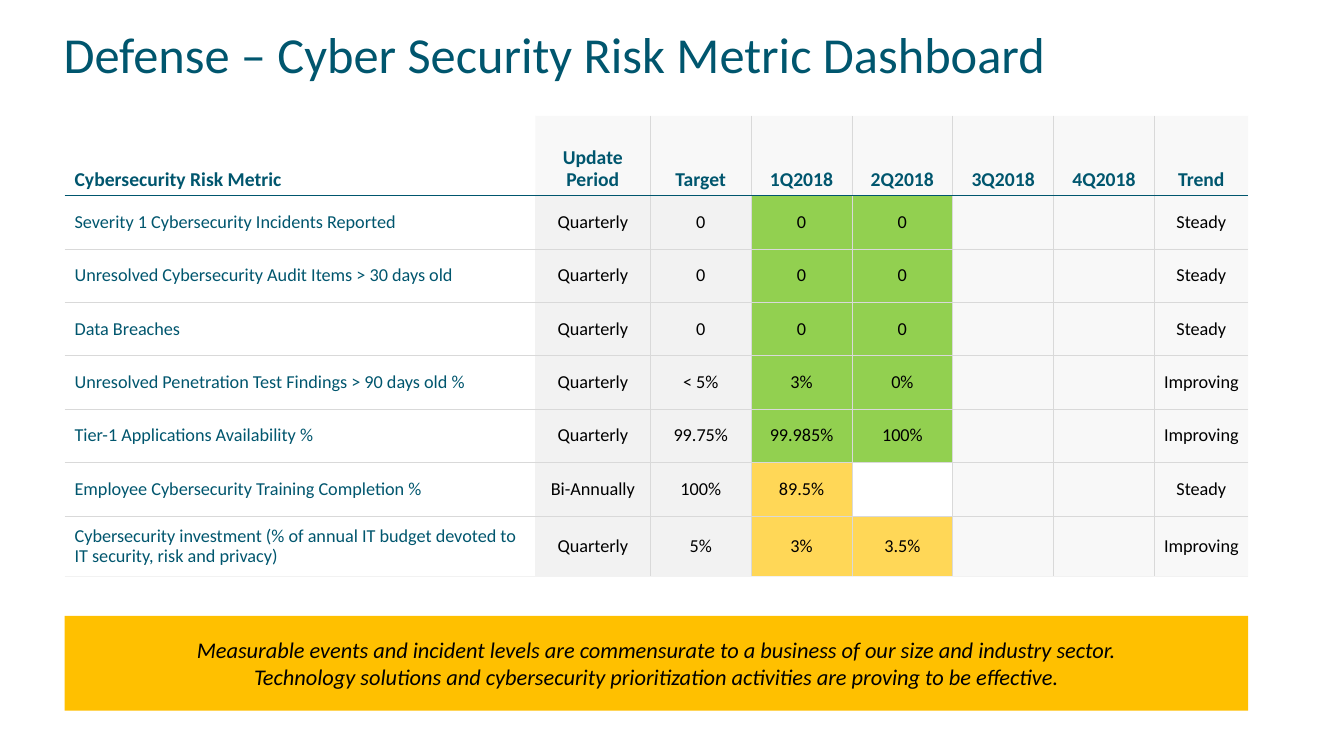
import pptx
import pptx.dml.color
import pptx.enum.shapes
import pptx.enum.text
import pptx.oxml.ns
import pptx.util
import lxml.etree

Inches = pptx.util.Inches
Pt = pptx.util.Pt
ALIGN = pptx.enum.text.PP_ALIGN
ANCHOR = pptx.enum.text.MSO_ANCHOR
AUTO_SIZE = pptx.enum.text.MSO_AUTO_SIZE

HEADINGS = ["Cybersecurity Risk Metric", "Update\vPeriod", "Target",
            "1Q2018", "2Q2018", "3Q2018", "4Q2018", "Trend"]
METRICS = [
    ["Severity 1 Cybersecurity Incidents Reported", "Quarterly", "0", "0", "0", "", "", "Steady"],
    ["Unresolved Cybersecurity Audit Items > 30 days old", "Quarterly", "0", "0", "0", "", "", "Steady"],
    ["Data Breaches", "Quarterly", "0", "0", "0", "", "", "Steady"],
    ["Unresolved Penetration Test Findings > 90 days old %", "Quarterly", "< 5%", "3%", "0%", "", "", "Improving"],
    ["Tier-1 Applications Availability %", "Quarterly", "99.75%", "99.985%", "100%", "", "", "Improving"],
    ["Employee Cybersecurity Training Completion %", "Bi-Annually", "100%", "89.5%", "", "", "", "Steady"],
    ["Cybersecurity investment (% of annual IT budget devoted to IT security, risk and privacy)",
     "Quarterly", "5%", "3%", "3.5%", "", "", "Improving"],
]
COLUMN_WIDTHS = [4.67, 1.14, 1, 1, 1, 1, 1, 0.93]
HEADER_HEIGHT, METRIC_HEIGHT = 0.79, 0.53
MET_ROWS = 5
RESULT_COLUMNS = (3, 4)


def rgb(value):
    return pptx.dml.color.RGBColor.from_string(value)


def subelement(parent, tag, **attributes):
    return lxml.etree.SubElement(parent, pptx.oxml.ns.qn(tag), attributes)


class Dashboard:
    font = "Calibri"
    teal, black = "00566E", "000000"
    shade, rule = "F2F2F2", "D9D9D9"
    met, missed, blank = "92D050", "FFD757", "FFFFFF"
    gold = "FFC000"

    def __init__(self, presentation):
        self.slide = presentation.slides.add_slide(presentation.slide_layouts[5])

    def set_text(self, frame, text, size, color, align, spacing=1.0, bold=False, italic=False):
        frame.text = text
        for paragraph in frame.paragraphs:
            paragraph.alignment = align
            paragraph.line_spacing = spacing
            for run in paragraph.runs:
                run.font.name = self.font
                run.font.size = Pt(size)
                run.font.bold = bold
                run.font.italic = italic
                run.font.color.rgb = rgb(color)

    def title(self, text, left, top, width, height):
        heading = self.slide.shapes.title
        heading.left, heading.top = Inches(left), Inches(top)
        heading.width, heading.height = Inches(width), Inches(height)
        frame = heading.text_frame
        frame.auto_size = AUTO_SIZE.NONE
        frame.vertical_anchor = ANCHOR.TOP
        self.set_text(frame, text, 36, self.teal, ALIGN.LEFT, 0.85)

    def banner(self, text, left, top, width, height):
        box = self.slide.shapes.add_shape(
            pptx.enum.shapes.MSO_SHAPE.RECTANGLE,
            Inches(left), Inches(top), Inches(width), Inches(height))
        box.shadow.inherit = False
        box.fill.solid()
        box.fill.fore_color.rgb = rgb(self.gold)
        box.line.fill.background()
        frame = box.text_frame
        frame.word_wrap = True
        frame.vertical_anchor = ANCHOR.MIDDLE
        frame.margin_left = frame.margin_right = Inches(0.2)
        frame.margin_top = frame.margin_bottom = Inches(0.2)
        self.set_text(frame, text, 16, self.black, ALIGN.CENTER, italic=True)

    def cell_fill(self, row, column, text):
        if column == 0:
            return None, 100
        if row > 0 and column in RESULT_COLUMNS:
            if not text:
                return self.blank, 100
            return (self.met if row <= MET_ROWS else self.missed), 100
        return self.shade, 100 if row > 0 and column < 3 else 50

    def paint(self, cell, color, opacity):
        if color is None:
            cell.fill.background()
            return
        cell.fill.solid()
        cell.fill.fore_color.rgb = rgb(color)
        if opacity < 100:
            fill = cell._tc.tcPr.find(pptx.oxml.ns.qn("a:solidFill"))
            subelement(fill[0], "a:alpha", val=str(opacity * 1000))

    def borders(self, cell, row, column):
        thin, strong, last = (self.rule, 0.5), (self.teal, 1), (self.shade, 1)
        edges = {
            "a:lnL": thin if column > 1 else None,
            "a:lnR": thin if 0 < column < len(HEADINGS) - 1 else None,
            "a:lnT": {0: None, 1: strong}.get(row, thin),
            "a:lnB": {0: strong, len(METRICS): last}.get(row, thin),
        }
        properties = cell._tc.get_or_add_tcPr()
        for tag, edge in edges.items():
            if edge is None:
                subelement(subelement(properties, tag, w="0"), "a:noFill")
            else:
                line = subelement(properties, tag, w=str(int(Pt(edge[1]))))
                subelement(subelement(line, "a:solidFill"), "a:srgbClr", val=edge[0])

    def cell(self, cell, row, column, text):
        header = row == 0
        cell.vertical_anchor = ANCHOR.BOTTOM if header else ANCHOR.MIDDLE
        cell.margin_left = Inches(0.1 if header or column < 2 else 0.05)
        cell.margin_right = Inches(0.1 if column == 1 or header and column else 0.05)
        cell.margin_top = cell.margin_bottom = Inches(0.05 if header else 0.1)
        self.set_text(cell.text_frame, text, 14 if header else 13,
                      self.teal if header or column == 0 else self.black,
                      ALIGN.CENTER if column else ALIGN.LEFT, 0.9, bold=header)
        self.borders(cell, row, column)
        self.paint(cell, *self.cell_fill(row, column, text))

    def table(self, rows, left, top):
        heights = [HEADER_HEIGHT] + [METRIC_HEIGHT] * (len(rows) - 1)
        metrics = self.slide.shapes.add_table(
            len(rows), len(COLUMN_WIDTHS), Inches(left), Inches(top),
            Inches(sum(COLUMN_WIDTHS)), Inches(sum(heights))).table
        metrics.first_row = metrics.horz_banding = False
        for column, width in zip(metrics.columns, COLUMN_WIDTHS):
            column.width = Inches(width)
        for row, (texts, height) in enumerate(zip(rows, heights)):
            metrics.rows[row].height = Inches(height)
            for column, text in enumerate(texts):
                self.cell(metrics.cell(row, column), row, column, text)


def main():
    presentation = pptx.Presentation()
    presentation.slide_width = Inches(13.33)
    presentation.slide_height = Inches(7.5)
    dashboard = Dashboard(presentation)
    dashboard.table([HEADINGS] + METRICS, 0.64, 1.15)
    dashboard.banner(
        "Measurable events and incident levels are commensurate to a business of our size and industry sector.\n"
        "Technology solutions and cybersecurity prioritization activities are proving to be effective.",
        0.64, 6.11, sum(COLUMN_WIDTHS), 0.94)
    dashboard.title("Defense – Cyber Security Risk Metric Dashboard", 0.53, 0.27, 12.8, 0.88)
    presentation.save("out.pptx")


if __name__ == "__main__":
    main()
